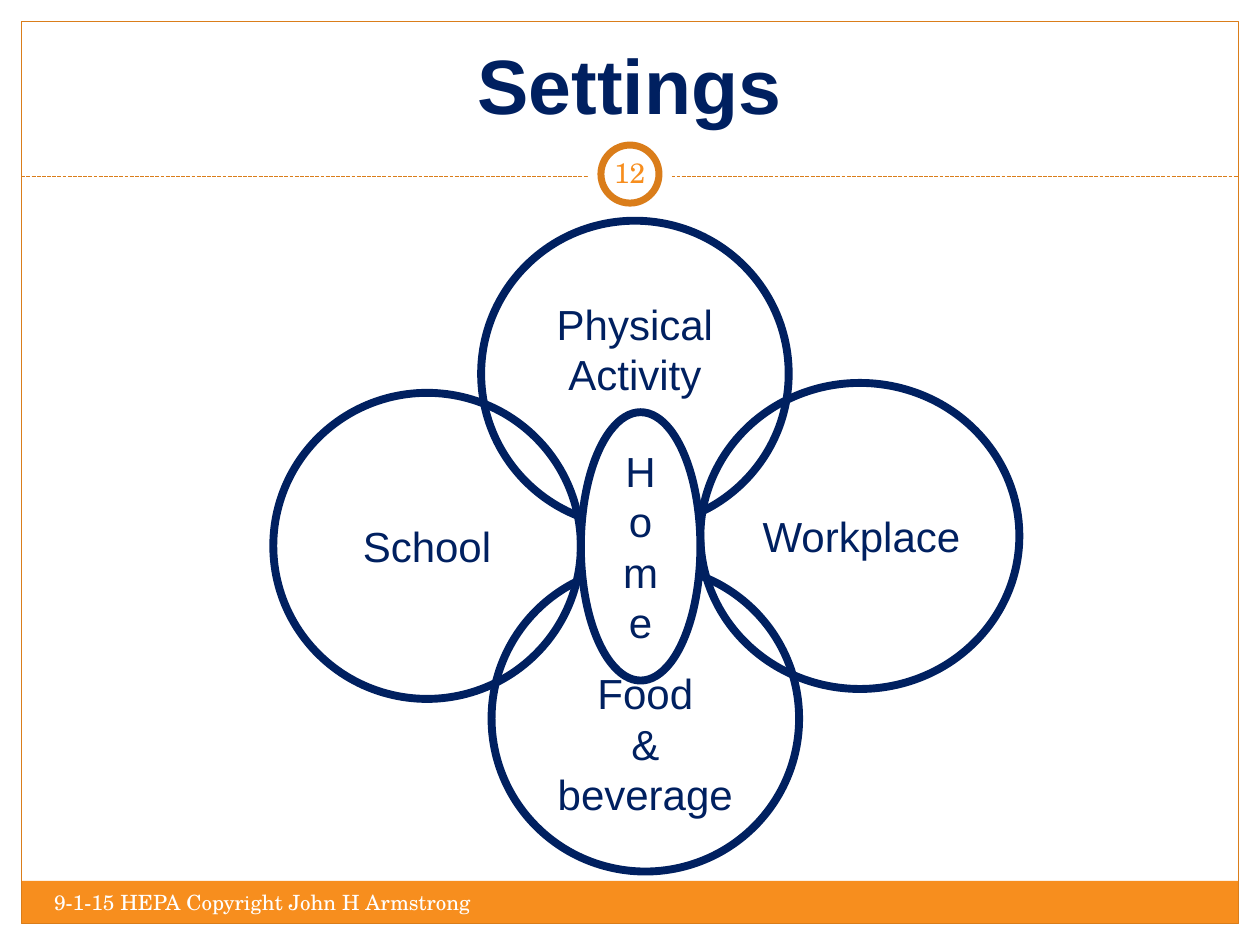
import pptx
import pptx.util
import pptx.dml.color
import pptx.enum.dml
import pptx.enum.shapes
import pptx.enum.text
import pptx.oxml.ns
import lxml.etree

Cm, Pt = pptx.util.Cm, pptx.util.Pt
RGB = pptx.dml.color.RGBColor
Kind = pptx.enum.shapes.MSO_SHAPE
Align = pptx.enum.text.PP_ALIGN
Anchor = pptx.enum.text.MSO_ANCHOR

NAVY = RGB(0x00, 0x20, 0x60)
ORANGE = RGB(0xF7, 0x8E, 0x1E)
RUST = RGB(0xDA, 0x7D, 0x1A)
WHITE = RGB(0xFF, 0xFF, 0xFF)
SANS, SERIF = "Arial", "TeX Gyre Schola"


def add_form(shapes, kind, box, fill=None, line=None, width=0.75):
    form = shapes.add_shape(kind, *map(Cm, box))
    form.shadow.inherit = False
    if fill is None:
        form.fill.background()
    else:
        form.fill.solid()
        form.fill.fore_color.rgb = fill
    if line is None:
        form.line.fill.background()
    else:
        form.line.color.rgb = line
        form.line.width = Pt(width)
    return form


def put_text(frame, lines, font, size, color, align, anchor, bold=False):
    frame.word_wrap = True
    frame.vertical_anchor = anchor
    frame.text = "\n".join(lines)
    for para in frame.paragraphs:
        para.alignment = align
        para.font.name = font
        para.font.size = Pt(size)
        para.font.color.rgb = color
        para.font.bold = bold


def add_border(slide, box):
    """Footer bar and the thin frame around the slide."""
    left, top, width, height = box
    bar = 0.86
    add_form(slide.shapes, Kind.RECTANGLE,
             (left, top + height - bar, width, bar), ORANGE)
    add_form(slide.shapes, Kind.RECTANGLE, box, None, RUST)
    note = slide.shapes.add_textbox(
        Cm(left + 0.41), Cm(top + height - 0.81), Cm(9.96), Cm(1.02))
    put_text(note.text_frame, ["9-1-15 HEPA Copyright John H Armstrong"],
             SERIF, 12, WHITE, Align.LEFT, Anchor.TOP)


def add_head(slide, box):
    """Title, dashed rule and page number in a ring."""
    left, top, width, height = box
    title = slide.shapes.title
    title.left, title.top = Cm(left + 0.41), Cm(top + 0.21)
    title.width, title.height = Cm(width - 0.84), Cm(2.11)
    title.text_frame.auto_size = pptx.enum.text.MSO_AUTO_SIZE.NONE
    put_text(title.text_frame, ["Settings"], SANS, 44, NAVY,
             Align.CENTER, Anchor.BOTTOM, True)

    base = top + height
    rule = slide.shapes.add_connector(
        pptx.enum.shapes.MSO_CONNECTOR.STRAIGHT,
        Cm(left), Cm(base), Cm(left + width), Cm(base))
    rule.line.color.rgb = RUST
    rule.line.width = Pt(0.75)
    rule.line.dash_style = pptx.enum.dml.MSO_LINE.SQUARE_DOT
    lxml.etree.SubElement(rule._element.spPr,
                          pptx.oxml.ns.qn("a:effectLst"))

    # White disc breaks the rule behind the ring
    mid, row = left + width / 2, base - 0.05
    for size, line in ((1.7, None), (1.17, RUST)):
        add_form(slide.shapes, Kind.OVAL,
                 (mid - size / 2, row - size / 2, size, size),
                 WHITE, line, 4)
    page = slide.shapes.add_textbox(
        Cm(mid - 0.64), Cm(row - 0.64), Cm(1.27), Cm(1.22))
    frame = page.text_frame
    frame.margin_left = frame.margin_right = Cm(0.13)
    frame.margin_top = frame.margin_bottom = Cm(0.13)
    put_text(frame, ["12"], SERIF, 16, ORANGE, Align.CENTER, Anchor.MIDDLE)


def add_venn(slide, left, top):
    """Four rings that overlap, with an oval at the heart."""
    group = slide.shapes.add_group_shape()
    mid, pad, drop = Align.CENTER, 0.13, 1.14
    # lines, x, y, width, height, fill, align, top and bottom margin
    rings = [
        (["Physical", "Activity"], 4.19, 0, 6.2, 6.17, None, mid, pad, drop),
        (["School"], 0, 3.47, 6.2, 6.17, None, mid, pad, pad),
        (["Food", "&", "beverage"], 4.4, 6.95, 6.2, 6.17, None, mid,
         drop, pad),
        (["Workplace"], 8.61, 3.27, 6.43, 6.17, None, Align.RIGHT, pad, pad),
        (list("Home"), 6.2, 3.86, 2.41, 5.41, WHITE, mid, pad, pad),
    ]
    for lines, x, y, width, height, fill, align, above, below in rings:
        ring = add_form(group.shapes, Kind.OVAL,
                        (left + x, top + y, width, height), fill, NAVY, 4.5)
        frame = ring.text_frame
        frame.margin_top, frame.margin_bottom = Cm(above), Cm(below)
        put_text(frame, lines, SANS, 24, NAVY, align, Anchor.MIDDLE)


def main():
    deck = pptx.Presentation()
    deck.slide_width, deck.slide_height = Cm(25.4), Cm(19.05)
    slide = deck.slides.add_slide(deck.slide_layouts[5])
    add_border(slide, (0.43, 0.43, 24.54, 18.19))
    add_head(slide, (0.43, 0.43, 24.54, 3.13))
    add_venn(slide, 5.51, 4.45)
    deck.save("out.pptx")


if __name__ == "__main__":
    main()
